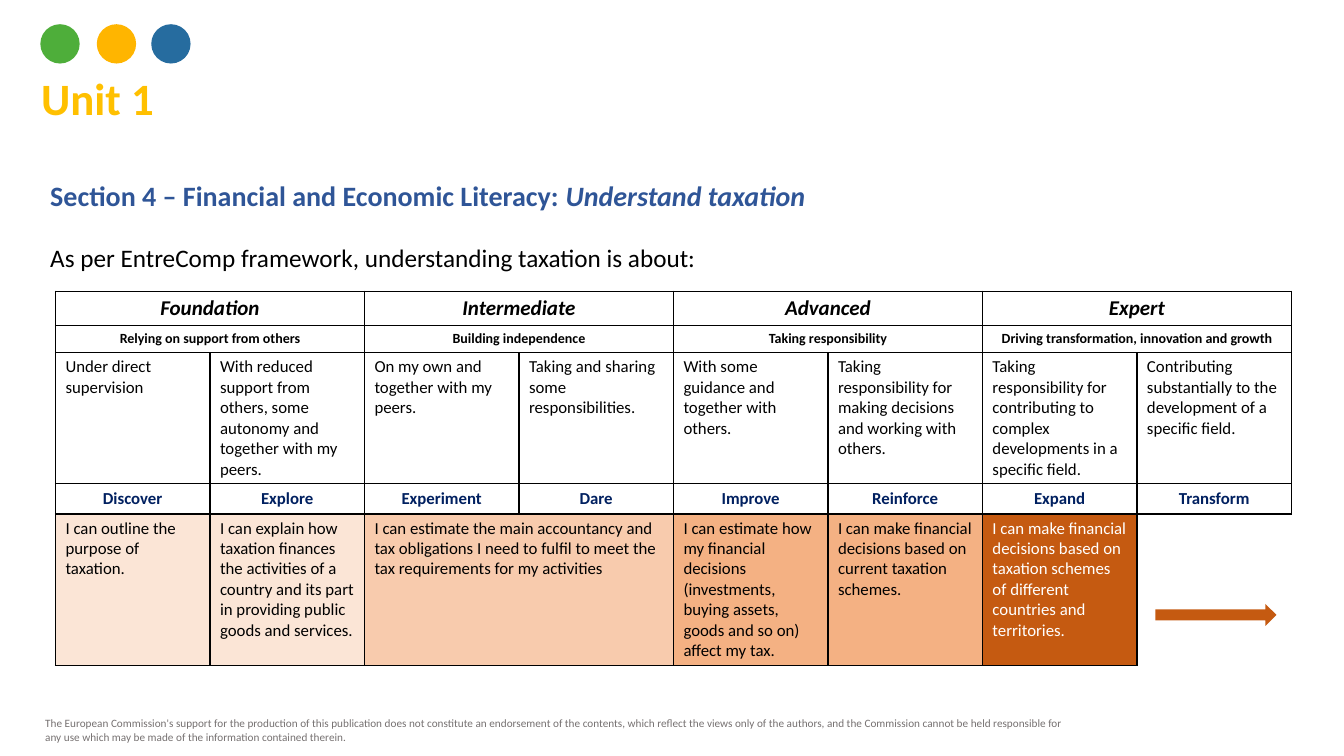
from dataclasses import dataclass

from lxml import etree
from pptx import Presentation
from pptx.dml.color import RGBColor
from pptx.enum.shapes import MSO_SHAPE
from pptx.enum.text import MSO_ANCHOR, PP_ALIGN
from pptx.oxml.ns import qn
from pptx.util import Inches, Pt

OVAL, ARROW = MSO_SHAPE.OVAL, MSO_SHAPE.RIGHT_ARROW
LEFT, CENTER, JUSTIFY = PP_ALIGN.LEFT, PP_ALIGN.CENTER, PP_ALIGN.JUSTIFY
TOP, MIDDLE = MSO_ANCHOR.TOP, MSO_ANCHOR.MIDDLE


@dataclass(frozen=True)
class Theme:
    font: str = "Calibri"
    black: str = "000000"
    white: str = "FFFFFF"
    grey: str = "767171"
    gold: str = "FFC000"
    blue: str = "2F5597"
    navy: str = "002060"
    rust: str = "C55A11"
    dots: tuple = ("4EAE3A", "FFB500", "266C9F")
    tints: tuple = ("FBE5D6", "F8CBAD", "F4B183")
    title: int = 32
    head: int = 20
    lead: int = 18
    level: int = 15
    body: int = 12
    small: int = 10
    note: int = 8


T = Theme()
COLS, COL_W = 8, 1.5325
HEIGHTS = (0.34, 0.27, 1.3, 0.3, 1.5)

LEVELS = ("Foundation", "Intermediate", "Advanced", "Expert")
ROLES = ("Relying on support from others", "Building independence",
         "Taking responsibility", "Driving transformation, innovation and growth")
MODES = (
    "Under direct supervision",
    "With reduced support from others, some autonomy and together with my peers.",
    "On my own and together with my peers.",
    "Taking and sharing some responsibilities.",
    "With some guidance and together with others.",
    "Taking responsibility for making decisions and working with others.",
    "Taking responsibility for contributing to complex developments in a specific field.",
    "Contributing substantially to the development of a specific field.",
)
STEPS = ("Discover", "Explore", "Experiment", "Dare",
         "Improve", "Reinforce", "Expand", "Transform")
# column, columns spanned, fill, text
SKILLS = (
    (0, 1, T.tints[0], "I can outline the purpose of taxation."),
    (1, 1, T.tints[0], "I can explain how taxation finances the activities of a country "
     "and its part in providing public goods and services."),
    (2, 2, T.tints[1], "I can estimate the main accountancy and tax obligations I need to "
     "fulfil to meet the tax requirements for my activities"),
    (4, 1, T.tints[2], "I can estimate how my financial decisions (investments, buying "
     "assets, goods and so on) affect my tax."),
    (5, 1, T.tints[2], "I can make financial decisions based on current taxation schemes."),
    (6, 1, T.rust, "I can make financial decisions based on taxation schemes of different "
     "countries and territories."),
)
NOTE = ("The European Commission's support for the production of this publication does not "
        "constitute an endorsement of the contents, which reflect the views only of the "
        "authors, and the Commission cannot be held responsible for any use which may be "
        "made of the information contained therein.")


def rgb(color):
    return RGBColor.from_string(color)


def add_run(para, text, size, color=T.black, **style):
    run = para.add_run()
    run.text = text
    look = {"name": T.font, "size": Pt(size), "bold": False, "italic": False, **style}
    for key, value in look.items():
        setattr(run.font, key, value)
    run.font.color.rgb = rgb(color)


def add_text(slide, box, paras, align=LEFT, gap=0):
    """Add a text box; each paragraph is a list of (text, size, color, style)."""
    frame = slide.shapes.add_textbox(*map(Inches, box)).text_frame
    frame.word_wrap = True
    for i, runs in enumerate(paras):
        para = frame.add_paragraph() if i else frame.paragraphs[0]
        para.alignment = align
        if i:
            para.space_before = Pt(gap)
        for text, size, color, style in runs:
            add_run(para, text, size, color, **style)


def add_shape(slide, kind, box, color):
    shape = slide.shapes.add_shape(kind, *map(Inches, box))
    shape.shadow.inherit = False
    shape.fill.solid()
    shape.fill.fore_color.rgb = rgb(color)
    shape.line.fill.background()


def set_edges(cell, shown):
    """Draw the named cell sides in black and hide the others."""
    props = cell._tc.get_or_add_tcPr()
    for side in "LRTB":
        line = etree.SubElement(props, qn(f"a:ln{side}"), w=str(Pt(1)))
        if side in shown:
            fill = etree.SubElement(line, qn("a:solidFill"))
            etree.SubElement(fill, qn("a:srgbClr"), val=T.black)
        else:
            etree.SubElement(line, qn("a:noFill"))


def fill_cell(cell, text, size, color=T.black, align=LEFT, anchor=TOP, fill=None, **style):
    cell.vertical_anchor = anchor
    if fill:
        cell.fill.solid()
        cell.fill.fore_color.rgb = rgb(fill)
    para = cell.text_frame.paragraphs[0]
    para.alignment = align
    add_run(para, text, size, color, **style)


def add_grid(slide):
    box = (0.55, 2.89, COLS * COL_W, sum(HEIGHTS))
    grid = slide.shapes.add_table(len(HEIGHTS), COLS, *map(Inches, box)).table
    grid.first_row = grid.horz_banding = False
    for col in grid.columns:
        col.width = Inches(COL_W)
    for row, height in zip(grid.rows, HEIGHTS):
        row.height = Inches(height)
    last = len(HEIGHTS) - 1
    for r in range(len(HEIGHTS)):
        for c in range(COLS):
            cell = grid.cell(r, c)
            cell.margin_top = cell.margin_bottom = Inches(0.04)
            set_edges(cell, "LT" if (r, c) == (last, COLS - 1) else "LRTB")
            cell.fill.background()

    head = {"align": CENTER, "anchor": MIDDLE, "bold": True}
    rows = (
        (LEVELS, 2, {"size": T.level, "italic": True, **head}),
        (ROLES, 2, {"size": T.small, **head}),
        (MODES, 1, {"size": T.body}),
        (STEPS, 1, {"size": T.body, "color": T.navy, **head}),
    )
    for r, (texts, span, look) in enumerate(rows):
        for i, text in enumerate(texts):
            cell = grid.cell(r, i * span)
            if span > 1:
                cell.merge(grid.cell(r, i * span + span - 1))
            fill_cell(cell, text, **look)
    for c, span, fill, text in SKILLS:
        cell = grid.cell(last, c)
        if span > 1:
            cell.merge(grid.cell(last, c + span - 1))
        color = T.white if fill == T.rust else T.black
        fill_cell(cell, text, T.body, color, fill=fill)


def main():
    deck = Presentation()
    deck.slide_width, deck.slide_height = Inches(13.33), Inches(7.5)
    slide = deck.slides.add_slide(deck.slide_layouts[6])

    bold = {"bold": True}
    add_text(slide, (0.35, 7.06, 10.46, 0.37), [[(NOTE, T.note, T.grey, {})]])
    add_text(slide, (0.31, 0.65, 1.68, 0.64), [[("Unit 1", T.title, T.gold, bold)]])
    add_text(slide, (0.4, 1.72, 12.26, 1.04), [
        [("Section 4 – Financial and Economic Literacy: ", T.head, T.blue, bold),
         ("Understand taxation", T.head, T.blue, {"bold": True, "italic": True})],
        [("As per EntreComp framework, understanding taxation is about:",
          T.lead, T.black, {})],
    ], JUSTIFY, gap=22)
    for x, color in zip((0.4, 0.96, 1.5), T.dots):
        add_shape(slide, OVAL, (x, 0.24, 0.39, 0.39), color)
    add_grid(slide)
    add_shape(slide, ARROW, (11.46, 5.99, 1.2, 0.22), T.rust)
    deck.save("out.pptx")


if __name__ == "__main__":
    main()
